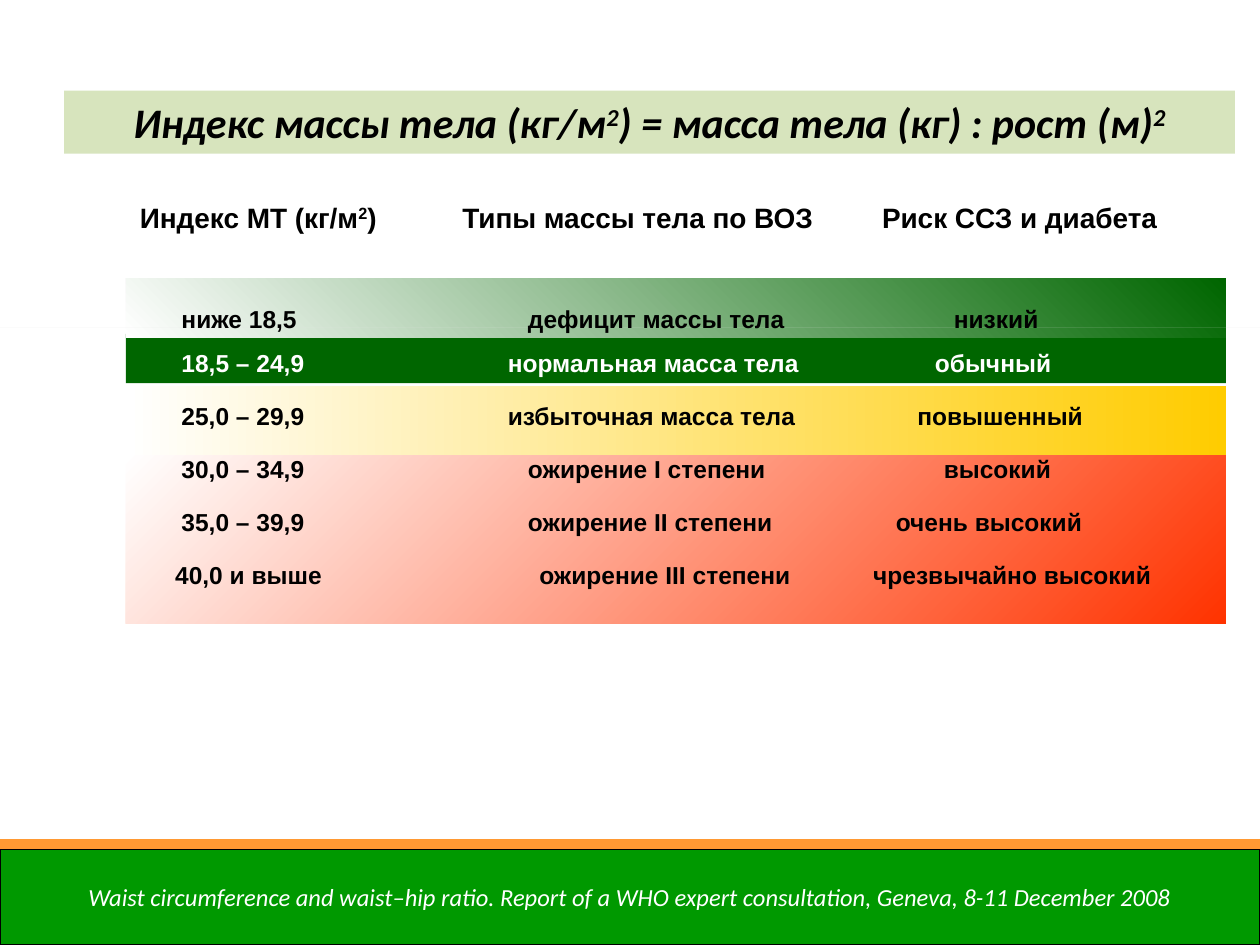
import dataclasses

import lxml.etree
import pptx
import pptx.dml.color
import pptx.enum.shapes
import pptx.enum.text
import pptx.oxml.ns
import pptx.util
from pptx.util import Inches

RGB = pptx.dml.color.RGBColor.from_string
PP_ALIGN = pptx.enum.text.PP_ALIGN
MIDDLE = pptx.enum.text.MSO_ANCHOR.MIDDLE
RECT = pptx.enum.shapes.MSO_SHAPE.RECTANGLE
qn = pptx.oxml.ns.qn
NO_STYLE = "{2D5ABB26-0587-4C30-8999-92F81FD0307C}"


@dataclasses.dataclass(frozen=True)
class Theme:
    heading_font: str = "Calibri"
    table_font: str = "Arial"
    title_size: int = 24
    header_size: int = 16
    body_size: int = 14
    black: str = "000000"
    white: str = "FFFFFF"
    title_fill: str = "D7E4BD"
    normal: str = "006600"
    overweight: str = "FFCC00"
    obese: str = "FF3300"
    rule: str = "E6E6E6"
    stripe: str = "FF9933"
    footer: str = "009900"


THEME = Theme()

# Row height, tab stops, then index, body type and risk.
ROWS = (
    (0.82, (0.21, 2.77, 6.1), ("Индекс МТ (кг/м^2^)", "Типы массы тела по ВОЗ", "Риск ССЗ и диабета")),
    (0.35, (0.54, 3.29, 6.67), ("ниже 18,5", "дефицит массы тела", "низкий")),
    (0.42, (0.54, 3.13, 6.52), ("18,5 – 24,9", "нормальная масса тела", "обычный")),
    (0.42, (0.54, 3.13, 6.38), ("25,0 – 29,9", "избыточная масса тела", "повышенный")),
    (0.42, (0.54, 3.29, 6.59), ("30,0 – 34,9", "ожирение I степени", "высокий")),
    (0.42, (0.54, 3.29, 6.21), ("35,0 – 39,9", "ожирение II степени", "очень высокий")),
    (0.7, (0.49, 3.38, 6.03), ("40,0 и выше", "ожирение III степени", "чрезвычайно высокий")),
)
NORMAL_ROW = 2


def add_rect(s, left, top, width, height, color, angle=None):
    """Flat rectangle, or a fade from white along a counter-clockwise angle."""
    sp = s.shapes.add_shape(RECT, Inches(left), Inches(top), Inches(width), Inches(height))
    sp.shadow.inherit = False
    sp.line.fill.background()
    if angle is None:
        sp.fill.solid()
        sp.fill.fore_color.rgb = RGB(color)
    else:
        sp.fill.gradient()
        sp.fill.gradient_angle = angle
        for stop, value in zip(sp.fill.gradient_stops, (THEME.white, color)):
            stop.color.rgb = RGB(value)
    return sp


def write(tf, text, font, size, color, bold=False, italic=False, align=PP_ALIGN.CENTER):
    """One line of text; parts between ^ marks are superscript."""
    p = tf.paragraphs[0]
    p.alignment = align
    for i, part in enumerate(text.split("^")):
        if not part:
            continue
        r = p.add_run()
        r.text = part
        r.font.name, r.font.size = font, pptx.util.Pt(size)
        r.font.bold, r.font.italic = bold, italic
        r.font.color.rgb = RGB(color)
        if i % 2:
            r._r.get_or_add_rPr().set("baseline", "30000")
    return p


def set_tabs(p, stops):
    tabs = lxml.etree.SubElement(p._p.get_or_add_pPr(), qn("a:tabLst"))
    for stop in stops:
        lxml.etree.SubElement(tabs, qn("a:tab"), pos=str(Inches(stop)), algn="l")


def add_bands(s, left, top, width):
    """Coloured risk zones behind the table rows."""
    add_rect(s, left, top + 0.44, width, 0.39, THEME.normal)
    add_rect(s, left, top + 1.4, width, 1.34, THEME.obese, angle=315)
    add_rect(s, left, top + 0.85, width, 0.55, THEME.overweight, angle=0)
    add_rect(s, left, top, width, 0.47, THEME.normal, angle=45)


def add_title(s, left, top, width, height):
    sp = add_rect(s, left, top, width, height, THEME.title_fill)
    tf = sp.text_frame
    tf.word_wrap, tf.vertical_anchor = True, MIDDLE
    write(tf, "Индекс массы тела (кг/м^2^) = масса тела (кг) : рост (м)^2^",
          THEME.heading_font, THEME.title_size, THEME.black, bold=True, italic=True)


def add_bmi_table(s, left, top, width):
    """Single-column table whose rows are laid out with tab stops."""
    total = sum(height for height, _, _ in ROWS)
    frame = s.shapes.add_table(len(ROWS), 1, Inches(left), Inches(top),
                               Inches(width), Inches(total))
    table = frame.table
    table.first_row = table.horz_banding = False
    table._tbl.tblPr.find(qn("a:tableStyleId")).text = NO_STYLE
    for i, (height, stops, values) in enumerate(ROWS):
        table.rows[i].height = Inches(height)
        cell = table.cell(i, 0)
        cell.fill.background()
        p = write(cell.text_frame, "".join("\t" + value for value in values),
                  THEME.table_font, THEME.body_size if i else THEME.header_size,
                  THEME.white if i == NORMAL_ROW else THEME.black,
                  bold=True, align=PP_ALIGN.LEFT)
        set_tabs(p, stops)


def add_footer(s, left, top, width, height):
    add_rect(s, left, top, width, 0.16, THEME.stripe)
    sp = add_rect(s, left, top + 0.08, width, height - 0.08, THEME.footer)
    sp.line.color.rgb = RGB(THEME.black)
    sp.line.width = pptx.util.Pt(0.75)
    tf = sp.text_frame
    tf.word_wrap, tf.vertical_anchor = False, MIDDLE
    write(tf, "Waist circumference and waist–hip ratio. Report of a WHO expert "
          "consultation, Geneva, 8-11 December 2008",
          THEME.heading_font, THEME.body_size, THEME.white, italic=True)


def main():
    prs = pptx.Presentation()
    prs.slide_width, prs.slide_height = Inches(10), Inches(7.5)
    s = prs.slides.add_slide(prs.slide_layouts[6])
    add_bands(s, 1, 2.21, 8.73)
    add_title(s, 0.51, 0.72, 9.29, 0.5)
    add_rect(s, 0, 2.6, 10, 0, THEME.rule)
    add_bmi_table(s, 0.8, 1.56, 8.71)
    add_footer(s, 0, 6.66, 10, 0.84)
    prs.save("out.pptx")


if __name__ == "__main__":
    main()
